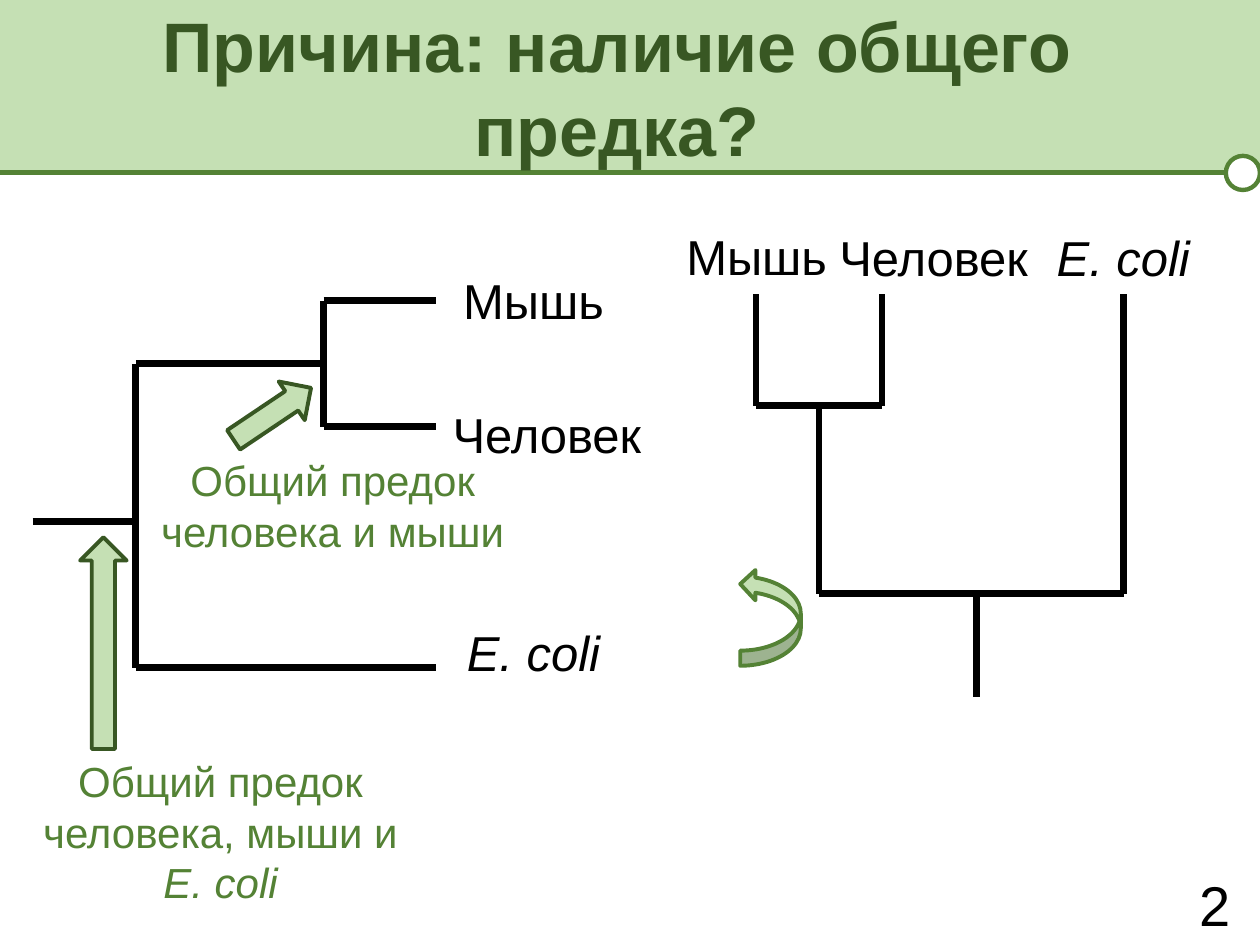
from lxml.etree import SubElement
from pptx import Presentation
from pptx.dml.color import RGBColor
from pptx.enum.shapes import MSO_CONNECTOR, MSO_SHAPE
from pptx.enum.text import MSO_AUTO_SIZE, PP_ALIGN
from pptx.oxml.ns import qn
from pptx.util import Pt

HUES = {"pale": "C5E0B4", "mid": "548235", "dark": "385723",
        "black": "000000", "white": "FFFFFF"}


def hue(name):
    """Return the named colour."""
    return RGBColor.from_string(HUES[name])


def text(slide, box, lines, size=28, color="black", bold=False, wrap=False):
    """Place centred lines, each a list of (words, italic) pairs."""
    frame = slide.shapes.add_textbox(*map(Pt, box)).text_frame
    frame.word_wrap = wrap
    frame.auto_size = MSO_AUTO_SIZE.SHAPE_TO_FIT_TEXT
    for i, line in enumerate(lines):
        para = frame.add_paragraph() if i else frame.paragraphs[0]
        para.alignment = PP_ALIGN.CENTER
        for words, slant in line:
            run = para.add_run()
            run.text = words
            font = run.font
            font.name, font.size = "Arial", Pt(size)
            font.bold, font.italic = bold, slant
            font.color.rgb = hue(color)


def line(group, start, end, color="black", width=4):
    """Draw a straight line between two points."""
    link = group.shapes.add_connector(
        MSO_CONNECTOR.STRAIGHT, *map(Pt, (*start, *end)))
    link.line.color.rgb = hue(color)
    link.line.width = Pt(width)
    SubElement(link._element.spPr, qn("a:effectLst"))


def shape(group, kind, box, fill="pale", edge=None, width=2.25, turn=0):
    """Add a filled preset shape, turned by some degrees."""
    item = group.shapes.add_shape(kind, *map(Pt, box))
    item.shadow.inherit = False
    item.fill.solid()
    item.fill.fore_color.rgb = hue(fill)
    if edge:
        item.line.color.rgb = hue(edge)
        item.line.width = Pt(width)
    else:
        item.line.fill.background()
    item.rotation = turn
    return item


def header(slide, box):
    """Build the title band with its rule, ring and title."""
    x, y, w, h = box
    group = slide.shapes.add_group_shape()
    shape(group, MSO_SHAPE.RECTANGLE, box)
    line(group, (x, y + h), (x + w - 15, y + h), "mid", 2.5)
    shape(group, MSO_SHAPE.OVAL, (x + w - 19.5, y + h - 9.5, 19.5, 19.5),
          "white", "mid", 2.5)
    text(slide, (x + 82.8, y - 2.2, 539.3, 104.4),
         [[("Причина: наличие общего", False)], [("предка?", False)]],
         size=40, color="dark", bold=True)


def tree(slide, box, names, upright=False):
    """Draw the tree in its box, growing right or up, and name its leaves."""
    x, y, w, h = box
    span, depth = (w, h) if upright else (h, w)
    fork, node, joint = 59, 166.3, 171.3
    mouse, human, germ = 0, 72, span
    pair, root = 36, 126

    def spot(far, side):
        """Turn depth and side into a point of the slide."""
        return (x + side, y + h - far) if upright else (x + far, y + side)

    group = slide.shapes.add_group_shape()
    for start, end in (
            ((0, root), (fork, root)),
            ((fork, root), (fork, pair)),
            ((fork, pair), (node, pair)),
            ((fork, root), (fork, germ)),
            ((fork, germ), (joint, germ)),
            ((node, mouse), (node, human)),
            ((node, mouse), (depth, mouse)),
            ((node, human), (depth, human)),
            ((joint, germ), (depth, germ))):
        line(group, spot(*start), spot(*end))
    for name, slant, wide, left, top in names:
        text(slide, (x + left, y + top, wide, 41), [[(name, slant)]])


def notes(slide, box):
    """Mark both common ancestors with arrows and captions."""
    x, y, w, h = box
    first = [("Общий предок", False)]
    arrow = MSO_SHAPE.RIGHT_ARROW
    shape(slide, arrow, (x + 116, y, 53.3, 26.6), edge="dark", turn=326.1)
    text(slide, (x + 64.1, y + 33.1, w, 65.5),
         [first, [("человека и мыши", False)]],
         size=24, color="mid", wrap=True)
    shape(slide, arrow, (x - 14.4, y + 131, 121, 26.6),
          edge="dark", turn=270)
    text(slide, (x, y + h - 94.3, w, 94.3),
         [first, [("человека, мыши и ", False), ("E. coli", True)]],
         size=24, color="mid", wrap=True)


def swing(slide, box):
    """Add the curved arrow that shows the turn of the tree."""
    item = shape(slide, MSO_SHAPE.CURVED_DOWN_ARROW, box, edge="mid", turn=270)
    item._element.spPr.find(qn("a:xfrm")).set("flipV", "1")


def main():
    """Build and save the slide."""
    deck = Presentation()
    deck.slide_width, deck.slide_height = Pt(720), Pt(540)
    slide = deck.slides.add_slide(deck.slide_layouts[6])
    header(slide, (0, 0, 720, 98.6))
    text(slide, (678.2, 493.9, 32.4, 46.1), [[("2", False)]], size=32)
    tree(slide, (18.7, 172, 230.4, 209.6), (
        ("Мышь", False, 95.8, 238.3, -20.8),
        ("E. coli", True, 91.4, 240.5, 180.1),
        ("Человек", False, 123.8, 231.9, 55.5)))
    tree(slide, (432, 167.8, 210.2, 230.4), (
        ("Мышь", False, 95.8, -47.5, -41.8),
        ("Человек", False, 123.8, 39.6, -41.1),
        ("E. coli", True, 91.4, 164.2, -41.1)), upright=True)
    swing(slide, (412.6, 335.5, 55.4, 34.6))
    notes(slide, (13, 223.2, 226.1, 299.5))
    deck.save("out.pptx")


if __name__ == "__main__":
    main()
